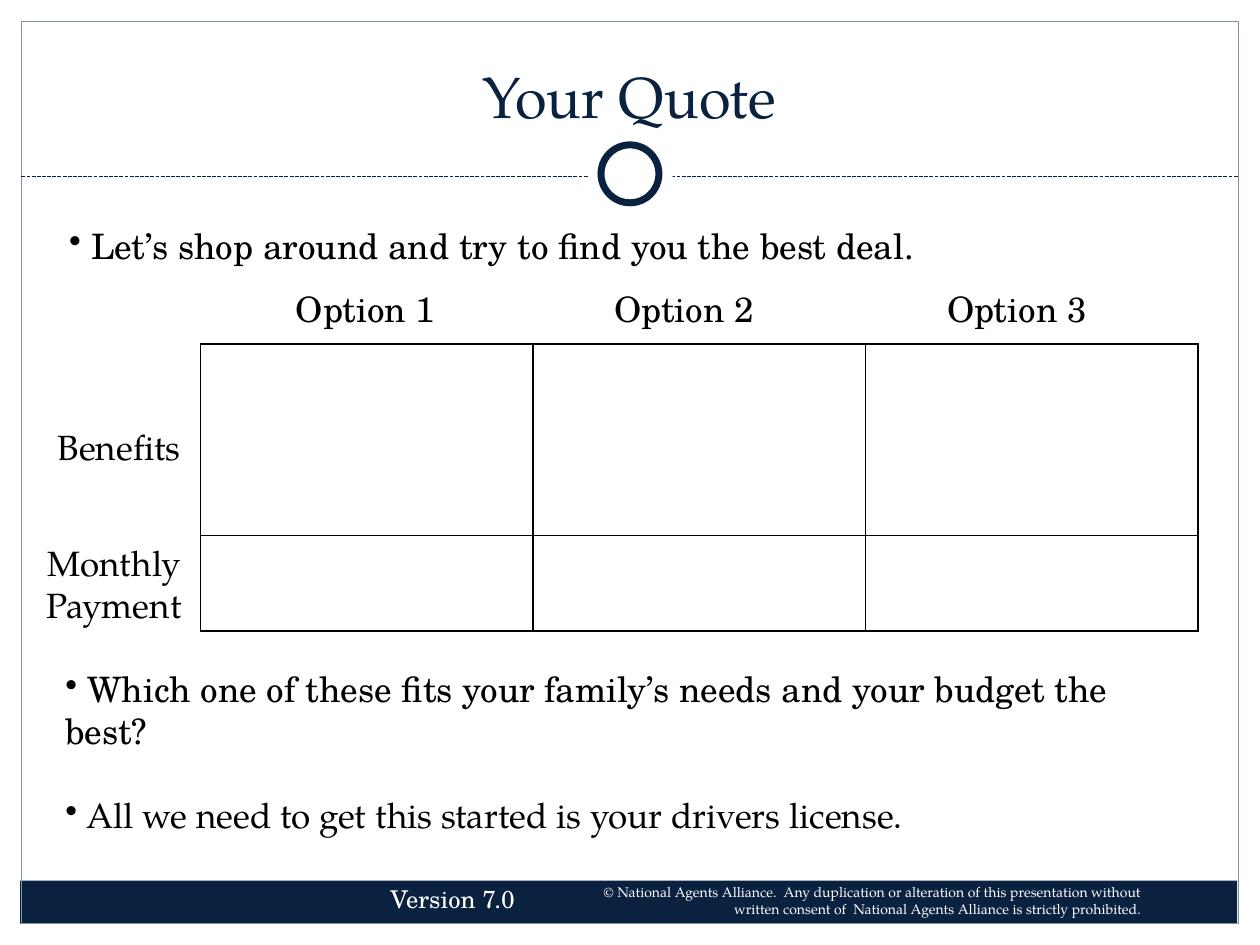
from lxml import etree
from pptx import Presentation
from pptx.dml.color import RGBColor
from pptx.enum.dml import MSO_LINE
from pptx.enum.shapes import MSO_CONNECTOR, MSO_SHAPE
from pptx.enum.text import MSO_ANCHOR, PP_ALIGN
from pptx.oxml.ns import qn
from pptx.util import Inches, Pt

NAVY, TEAL, WHITE, BLACK = "0A2240", "7C999A", "FFFFFF", "000000"
SERIF, BOOK = "TeX Gyre Pagella", "TeX Gyre Schola"


def color(hex_string):
    return RGBColor.from_string(hex_string)


class SlideBuilder:
    def __init__(self, slide, font=SERIF, size=20, ink=BLACK):
        self.slide = slide
        self.font, self.size, self.ink = font, size, ink

    def shape(self, kind, left, top, width, height, fill=None, line=None, weight=0.75):
        shape = self.slide.shapes.add_shape(
            kind, Inches(left), Inches(top), Inches(width), Inches(height))
        shape.shadow.inherit = False
        if fill:
            shape.fill.solid()
            shape.fill.fore_color.rgb = color(fill)
        else:
            shape.fill.background()
        if line:
            shape.line.color.rgb = color(line)
            shape.line.width = Pt(weight)
        else:
            shape.line.fill.background()

    def dashed_line(self, left, right, top):
        connector = self.slide.shapes.add_connector(
            MSO_CONNECTOR.STRAIGHT, Inches(left), Inches(top), Inches(right), Inches(top))
        connector.line.color.rgb = color(NAVY)
        connector.line.width = Pt(0.75)
        connector.line.dash_style = MSO_LINE.SQUARE_DOT
        etree.SubElement(connector._element.spPr, qn("a:effectLst"))

    def text_box(self, left, top, width, height, anchor=MSO_ANCHOR.TOP):
        """Add an empty wrapping text box and return its frame."""
        box = self.slide.shapes.add_textbox(
            Inches(left), Inches(top), Inches(width), Inches(height))
        frame = box.text_frame
        frame.word_wrap = True
        frame.vertical_anchor = anchor
        return frame

    def add_text(self, frame, text, font=None, size=None, ink=None,
                 align=PP_ALIGN.LEFT, bullet=False, before=0):
        """Add one formatted paragraph, using the first one while it is empty."""
        first = frame.paragraphs[0]
        paragraph = frame.add_paragraph() if first.runs else first
        paragraph.alignment = align
        if before:
            paragraph.space_before = Pt(before)
        if bullet:
            properties = paragraph._p.get_or_add_pPr()
            etree.SubElement(properties, qn("a:buChar")).set("char", "•")
            text = " " + text
        run = paragraph.add_run()
        run.text = text
        run.font.name = font or self.font
        run.font.size = Pt(size or self.size)
        run.font.color.rgb = color(ink or self.ink)

    def label(self, text, left, top, width, height, anchor=MSO_ANCHOR.TOP, **style):
        self.add_text(self.text_box(left, top, width, height, anchor), text, **style)

    def empty_table(self, left, top, column_widths, row_heights):
        table = self.slide.shapes.add_table(
            len(row_heights), len(column_widths), Inches(left), Inches(top),
            Inches(sum(column_widths)), Inches(sum(row_heights))).table
        table.first_row = table.horz_banding = False
        for column, width in zip(table.columns, column_widths):
            column.width = Inches(width)
        for row, height in zip(table.rows, row_heights):
            row.height = Inches(height)
        for cell in table.iter_cells():
            cell.fill.background()
            self.cell_borders(cell)

    def cell_borders(self, cell):
        properties = cell._tc.get_or_add_tcPr()
        for position, side in enumerate("LRTB"):
            border = etree.Element(qn(f"a:ln{side}"), w=str(Pt(1)))
            fill = etree.SubElement(border, qn("a:solidFill"))
            etree.SubElement(fill, qn("a:srgbClr"), val=BLACK)
            properties.insert(position, border)


def add_frame(builder):
    """Draw the border, footer bar, divider and ring."""
    builder.shape(MSO_SHAPE.RECTANGLE, 0.16, 6.99, 9.66, 0.34, fill=NAVY)
    builder.shape(MSO_SHAPE.RECTANGLE, 0.17, 0.17, 9.66, 7.16, line=TEAL)
    builder.dashed_line(0.17, 9.83, 1.4)
    builder.shape(MSO_SHAPE.OVAL, 4.67, 1.05, 0.67, 0.67, fill=WHITE)
    builder.shape(MSO_SHAPE.OVAL, 4.77, 1.15, 0.46, 0.46, fill=WHITE, line=NAVY, weight=4)


def add_footer(builder):
    builder.label("Version 7.0", 3, 6.97, 1.67, 0.34, font=BOOK, size=14, ink=WHITE)
    notice = builder.text_box(4.33, 7.03, 4.83, 0.3, MSO_ANCHOR.BOTTOM)
    for line in (
        "© National Agents Alliance.  Any duplication or alteration of this presentation without",
        "written consent of  National Agents Alliance is strictly prohibited.",
    ):
        builder.add_text(notice, line, size=8, ink=WHITE, align=PP_ALIGN.RIGHT)


def add_quote(builder):
    builder.label("Your Quote", 0.33, 0.25, 9.33, 0.83, MSO_ANCHOR.BOTTOM,
                  size=33, ink=NAVY, align=PP_ALIGN.CENTER)
    builder.label("Let’s shop around and try to find you the best deal.",
                  0.45, 1.73, 8.6, 0.74, font=BOOK, bullet=True)
    builder.empty_table(1.59, 2.73, [2.64] * 3, [1.52, 0.76])
    builder.label("Benefits", 0.36, 3.33, 1.21, 0.44)
    builder.label("Monthly Payment", 0.24, 4.25, 1.33, 0.77, align=PP_ALIGN.CENTER)
    for number, left in enumerate((2.25, 4.78, 7.42), start=1):
        builder.label(f"Option {number}", left, 2.23, 1.5, 0.44, font=BOOK)

    closing = builder.text_box(0.42, 5.25, 9.08, 1.41)
    builder.add_text(closing,
                     "Which one of these fits your family’s needs and your budget the best?",
                     font=BOOK, bullet=True)
    builder.add_text(closing, "All we need to get this started is your drivers license.",
                     bullet=True, before=24)


def main():
    presentation = Presentation()
    presentation.slide_width, presentation.slide_height = Inches(10), Inches(7.5)
    builder = SlideBuilder(presentation.slides.add_slide(presentation.slide_layouts[6]))
    add_frame(builder)
    add_footer(builder)
    add_quote(builder)
    presentation.save("out.pptx")


if __name__ == "__main__":
    main()
